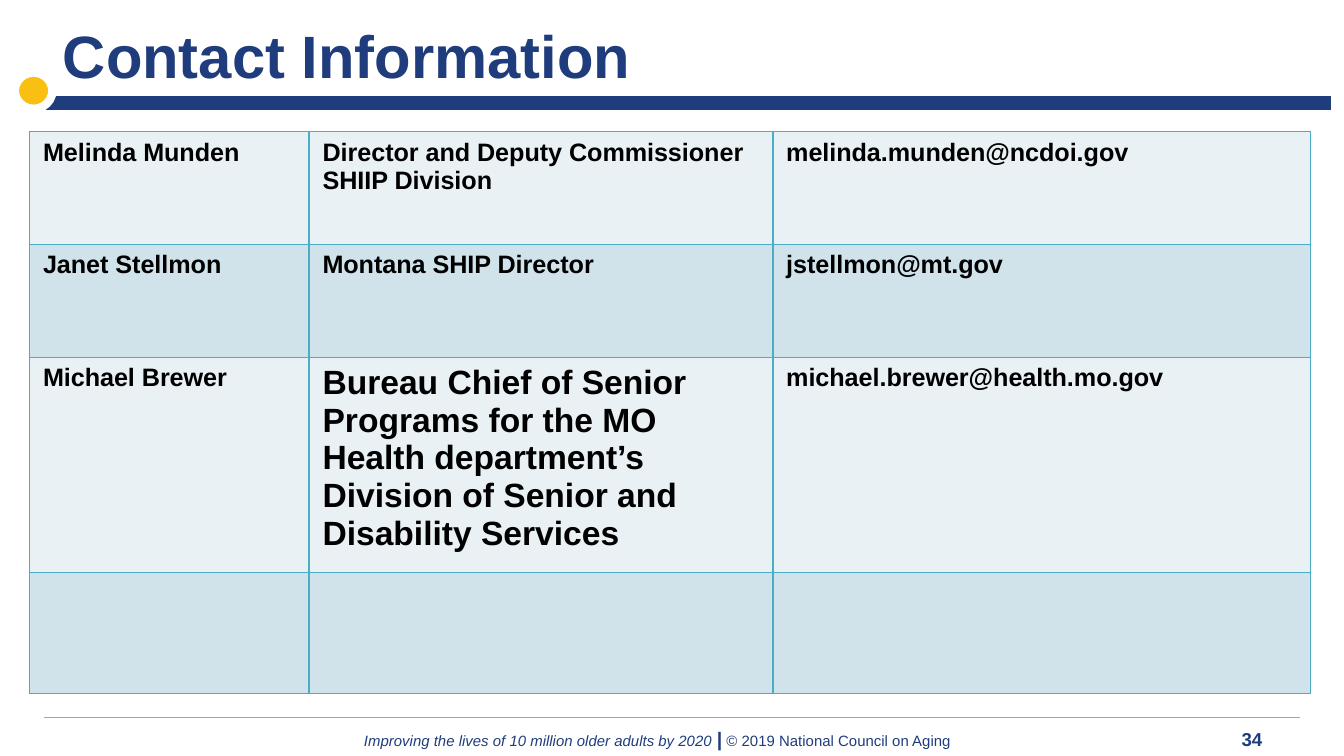
from lxml import etree
from pptx import Presentation
from pptx.dml.color import RGBColor
from pptx.enum import shapes, text
from pptx.oxml.ns import qn
from pptx.util import Inches, Pt

NAVY = RGBColor(0x1F, 0x3D, 0x7C)
GOLD = RGBColor(0xF9, 0xBF, 0x12)
WHITE = RGBColor(0xFF, 0xFF, 0xFF)
BLACK = RGBColor(0, 0, 0)
RULE_GREY = RGBColor(0xA6, 0xA6, 0xA6)
TEAL = RGBColor(0x4B, 0xAC, 0xC6)
ROW_FILLS = (RGBColor(0xE9, 0xF1, 0xF5), RGBColor(0xD0, 0xE3, 0xEA))

SLIDE_WIDTH = 10
COLUMN_WIDTHS = (2.08, 3.45, 4)
ROW_HEIGHTS = (0.84, 0.84, 0.84, 0.9)  # the third grows with its text
CONTACTS = (
    ("Melinda Munden", "Director and Deputy Commissioner SHIIP Division",
     "melinda.munden@ncdoi.gov"),
    ("Janet Stellmon", "Montana SHIP Director", "jstellmon@mt.gov"),
    ("Michael Brewer",
     "Bureau Chief of Senior Programs for the MO Health department’s "
     "Division of Senior and Disability Services",
     "michael.brewer@health.mo.gov"),
    ("", "", ""),
)
LARGE_CELL = (2, 1)


def add_text(paragraph, words, size, color=NAVY, bold=False, italic=False):
    run = paragraph.add_run()
    run.text = words
    font = run.font
    font.name, font.size, font.color.rgb = "Arial", Pt(size), color
    font.bold, font.italic = bold, italic


def add_frame(slide, left, top, width, height):
    box = slide.shapes.add_textbox(*map(Inches, (left, top, width, height)))
    frame = box.text_frame
    frame.word_wrap = True
    frame.vertical_anchor = text.MSO_ANCHOR.TOP
    return frame


def add_outlined(slide, preset, box, fill, line_width):
    shape = slide.shapes.add_shape(preset, *map(Inches, box))
    shape.shadow.inherit = False
    shape.fill.solid()
    shape.fill.fore_color.rgb = fill
    shape.line.color.rgb = WHITE
    shape.line.width = Pt(line_width)


def add_header(slide, left, top, width):
    add_outlined(slide, shapes.MSO_SHAPE.RECTANGLE,
                 (left + 0.06, top + 0.61, width - 0.06, 0.13), NAVY, 2)
    add_outlined(slide, shapes.MSO_SHAPE.OVAL,
                 (left, top + 0.45, 0.28, 0.27), GOLD, 4.5)
    title = add_frame(slide, left + 0.26, top, width - 0.27, 0.69)
    add_text(title.paragraphs[0], "Contact Information", 32, bold=True)


def set_borders(cell, color, width):
    properties = cell._tc.get_or_add_tcPr()
    for position, tag in enumerate(("lnL", "lnR", "lnT", "lnB")):
        line = etree.Element(qn(f"a:{tag}"), w=str(Pt(width)))
        fill = etree.SubElement(line, qn("a:solidFill"))
        etree.SubElement(fill, qn("a:srgbClr"), val=str(color))
        properties.insert(position, line)


def add_contacts(slide, left, top, width, height):
    table = slide.shapes.add_table(
        len(CONTACTS), len(COLUMN_WIDTHS),
        *map(Inches, (left, top, width, height))).table
    table.first_row = False
    for column, column_width in zip(table.columns, COLUMN_WIDTHS):
        column.width = Inches(column_width)
    for r, contact in enumerate(CONTACTS):
        table.rows[r].height = Inches(ROW_HEIGHTS[r])
        for c, words in enumerate(contact):
            cell = table.cell(r, c)
            cell.fill.solid()
            cell.fill.fore_color.rgb = ROW_FILLS[r % 2]
            set_borders(cell, TEAL, 1)
            if words:
                size = 18 if (r, c) == LARGE_CELL else 13.5
                add_text(cell.text_frame.paragraphs[0], words, size,
                         BLACK, bold=True)


def add_footer(slide, left, top, width):
    rule = slide.shapes.add_connector(
        shapes.MSO_CONNECTOR.STRAIGHT, Inches(left), Inches(top),
        Inches(left + width), Inches(top))
    rule.line.color.rgb = RULE_GREY
    rule.line.width = Pt(0.5)
    etree.SubElement(rule._element.spPr, qn("a:effectLst"))

    frame = add_frame(slide, left + 2.28, top + 0.02, 7.2, 0.26)
    line = frame.paragraphs[0]
    tabs = etree.SubElement(line._p.get_or_add_pPr(), qn("a:tabLst"))
    etree.SubElement(tabs, qn("a:tab"), pos=str(Inches(6.53)), algn="l")
    add_text(line, "Improving the lives of 10 million older adults by 2020 ",
             8, italic=True)
    add_text(line, "|", 10.5, bold=True)
    add_text(line, " © 2019 National Council on Aging\t", 8)
    add_text(line, "34", 10, bold=True)


def main():
    deck = Presentation()
    deck.slide_width = Inches(SLIDE_WIDTH)
    deck.slide_height = Inches(SLIDE_WIDTH * 9 / 16)
    slide = deck.slides.add_slide(deck.slide_layouts[6])
    add_footer(slide, 0.33, 5.34, 9.34)
    add_header(slide, 0.11, 0.09, 9.81)
    add_contacts(slide, 0.22, 0.98, 9.54, 4.33)
    deck.save("out.pptx")


if __name__ == "__main__":
    main()
